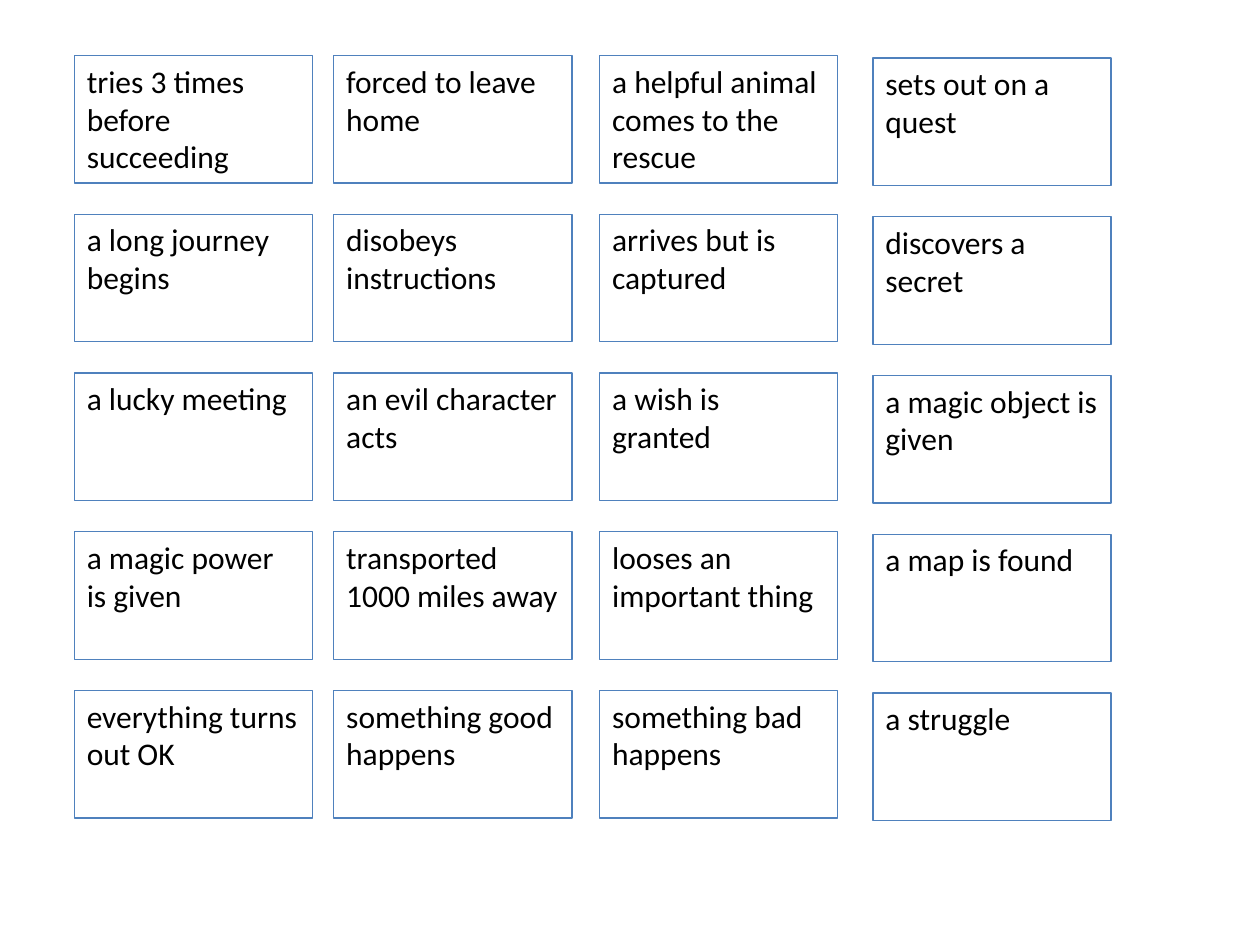
from pptx import Presentation as Deck
from pptx.dml.color import RGBColor as Rgb
from pptx.enum.shapes import MSO_SHAPE as Kind
from pptx.enum.text import MSO_ANCHOR as Anchor, MSO_AUTO_SIZE as Fit, PP_ALIGN as Align
from pptx.util import Cm, Pt

HUES = {"edge": "4F81BD", "ink": "000000"}
COLS = [(1.5, 1.12), (6.73, 1.12), (12.09, 1.12), (17.6, 1.17)]
STEP = 3.2
ROWS = [
    ["tries 3 times before succeeding", "forced to leave home",
     "a helpful animal comes to the rescue", "sets out on a quest"],
    ["a long journey begins", "disobeys instructions",
     "arrives but is captured", "discovers a secret"],
    ["a lucky meeting", "an evil character acts",
     "a wish is granted", "a magic object is given"],
    ["a magic power is given", "transported 1000 miles away",
     "looses an important thing", "a map is found"],
    ["everything turns out OK", "something good happens",
     "something bad happens", "a struggle"],
]


class Board:
    """Draws story cards of one style on a slide."""

    font, size, line = "Calibri", Pt(18), Pt(0.75)
    wide, high = Cm(4.8), Cm(2.57)

    def __init__(self, slide):
        self.slide = slide

    def card(self, left, top, text):
        box = self.slide.shapes.add_shape(
            Kind.RECTANGLE, Cm(left), Cm(top), self.wide, self.high)
        box.shadow.inherit = False
        box.fill.background()
        box.line.color.rgb = Rgb.from_string(HUES["edge"])
        box.line.width = self.line
        frame = box.text_frame
        frame.word_wrap = True
        frame.auto_size = Fit.NONE
        frame.vertical_anchor = Anchor.TOP
        para = frame.paragraphs[0]
        para.alignment = Align.LEFT
        run = para.add_run()
        run.text = text
        run.font.name = self.font
        run.font.size = self.size
        run.font.color.rgb = Rgb.from_string(HUES["ink"])


def main():
    deck = Deck()
    deck.slide_width, deck.slide_height = Cm(25.4), Cm(19.05)
    board = Board(deck.slides.add_slide(deck.slide_layouts[6]))
    for row, texts in enumerate(ROWS):
        for (left, top), text in zip(COLS, texts):
            board.card(left, top + row * STEP, text)
    deck.save("out.pptx")


if __name__ == "__main__":
    main()
